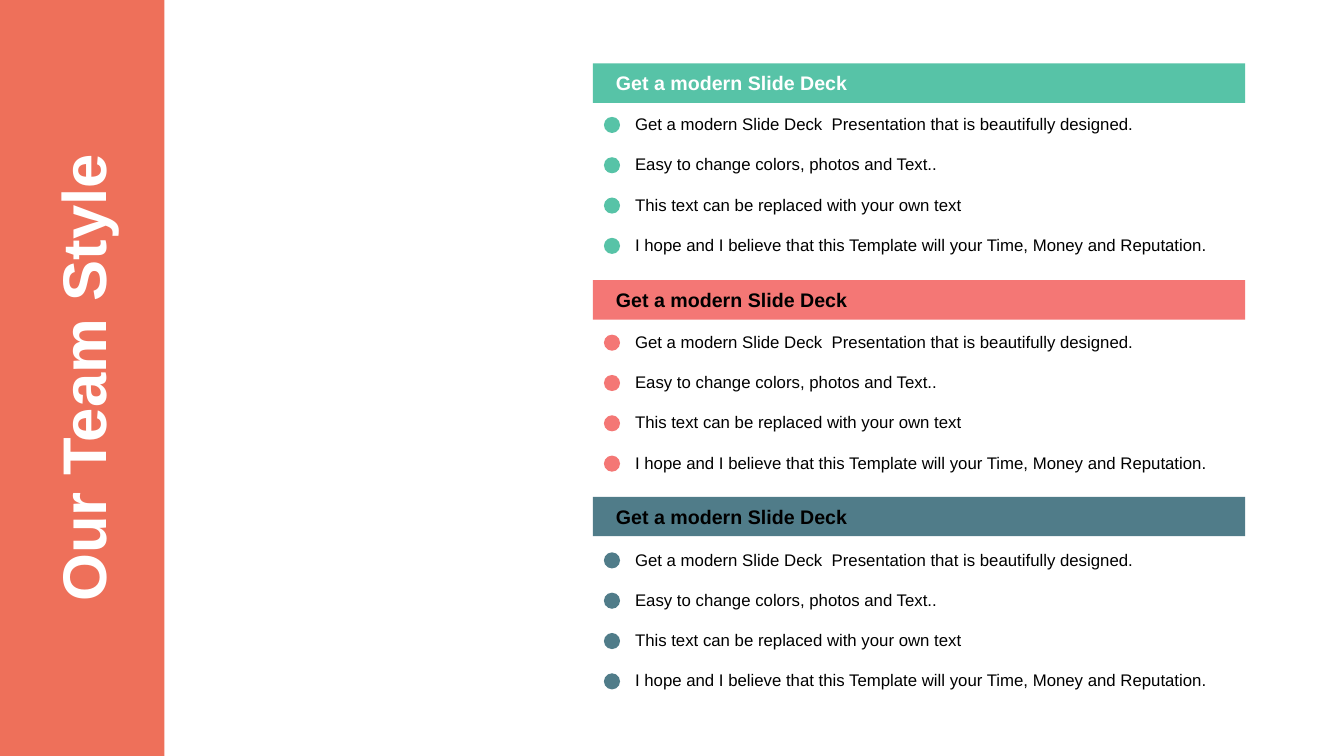
from pptx import Presentation
from pptx.dml.color import RGBColor
from pptx.enum import shapes, text
from pptx.util import Inches, Pt

COLORS = {
    "band": "EE705A",
    "green": "57C3A7",
    "coral": "F47775",
    "slate": "507C89",
    "white": "FFFFFF",
    "black": "000000",
}
HEADING = "Get a modern Slide Deck"
POINTS = [
    "Get a modern Slide Deck  Presentation that is beautifully designed.",
    "Easy to change colors, photos and Text..",
    "This text can be replaced with your own text",
    "I hope and I believe that this Template will your Time, Money and Reputation.",
]
# Fill and heading colour of each section
SECTIONS = [("green", "white"), ("coral", "black"), ("slate", "black")]

BAR_TOP, BAR_PITCH, BAR_HEIGHT = 0.63, 2.15, 0.39
LIST_TOP, LIST_PITCH, ROW_PITCH = 1.08, 2.16, 0.4


def rgb(name):
    return RGBColor.from_string(COLORS[name])


def add_block(s, kind, left, top, width, height, color):
    """Add a plain filled shape without outline or shadow."""
    sp = s.shapes.add_shape(kind, Inches(left), Inches(top), Inches(width), Inches(height))
    sp.shadow.inherit = False
    sp.fill.solid()
    sp.fill.fore_color.rgb = rgb(color)
    sp.line.fill.background()
    return sp


def write(sp, content, size=12, color="black", bold=False,
          align=text.PP_ALIGN.LEFT, anchor=text.MSO_ANCHOR.TOP):
    tf = sp.text_frame
    tf.word_wrap = True
    tf.auto_size = text.MSO_AUTO_SIZE.NONE
    tf.vertical_anchor = anchor
    p = tf.paragraphs[0]
    p.alignment = align
    r = p.add_run()
    r.text = content
    r.font.name = "Arial"
    r.font.size = Pt(size)
    r.font.bold = bold
    r.font.color.rgb = rgb(color)


def add_text(s, content, left, top, width, height, **style):
    sp = s.shapes.add_textbox(Inches(left), Inches(top), Inches(width), Inches(height))
    write(sp, content, **style)


def add_side_title(s, content):
    band = add_block(s, shapes.MSO_SHAPE.RECTANGLE, 0, 0, 1.63, 7.5, "band")
    title = s.shapes.title
    title.element.addprevious(band.element)  # the band lies behind the title
    title.left, title.top = Inches(-2.02), Inches(3.33)
    title.width, title.height = Inches(5.67), Inches(0.84)
    title.rotation = 270
    write(title, content, size=44, color="white", bold=True,
          align=text.PP_ALIGN.CENTER)


def add_section(s, index, fill, heading_color):
    bar_top = BAR_TOP + index * BAR_PITCH
    add_block(s, shapes.MSO_SHAPE.RECTANGLE, 5.88, bar_top, 6.47, BAR_HEIGHT, fill)
    add_text(s, HEADING, 6.01, bar_top + 0.04, 3.62, 0.31, size=14,
             color=heading_color, bold=True, anchor=text.MSO_ANCHOR.MIDDLE)
    for row, point in enumerate(POINTS):
        top = LIST_TOP + index * LIST_PITCH + row * ROW_PITCH
        add_block(s, shapes.MSO_SHAPE.OVAL, 5.99, top + 0.08, 0.16, 0.16, fill)
        add_text(s, point, 6.2, top, 6.28, 0.3)


def main():
    prs = Presentation()
    prs.slide_width, prs.slide_height = Inches(13.33), Inches(7.5)
    s = prs.slides.add_slide(prs.slide_layouts.get_by_name("Title Only"))
    add_side_title(s, "Our Team Style")
    for index, (fill, heading_color) in enumerate(SECTIONS):
        add_section(s, index, fill, heading_color)
    prs.save("out.pptx")


if __name__ == "__main__":
    main()
